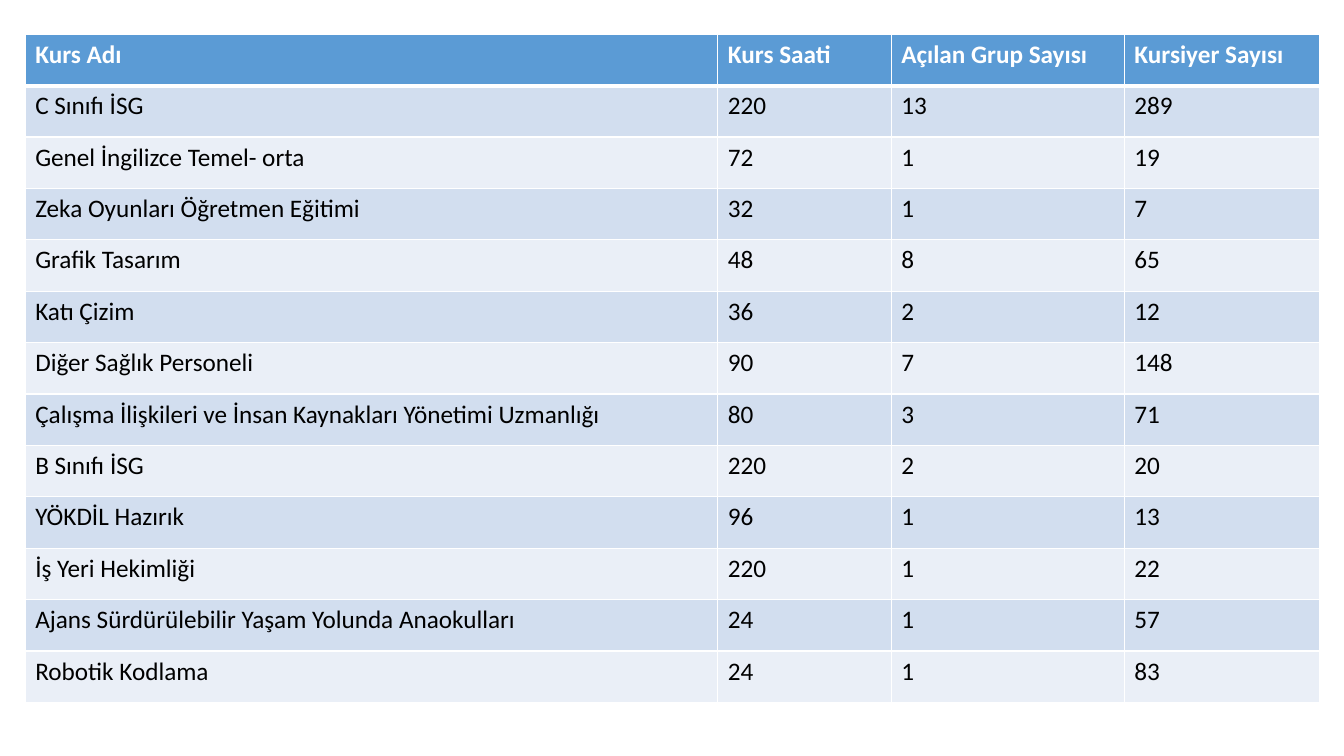
from dataclasses import dataclass

from lxml import etree
from pptx import Presentation
from pptx.dml.color import RGBColor
from pptx.oxml.ns import qn
from pptx.util import Inches, Pt


@dataclass(frozen=True)
class Theme:
    """Colours, type and line widths of the slide."""
    font: str = "Calibri"
    size: int = 18
    header_fill: str = "5B9BD5"
    header_text: str = "FFFFFF"
    body_text: str = "000000"
    bands: tuple = ("D2DEEF", "EAEFF7")
    border: str = "FFFFFF"
    thin: int = 1
    thick: int = 3


THEME = Theme()
BLANK = 6
SLIDE_W, SLIDE_H = 13.33, 7.5
TABLE_BOX = (0.25, 0.34, 12.84, 6.63)
COLUMN_SHARES = (0.535, 0.134, 0.18, 0.151)
HEADERS = ("Kurs Adı", "Kurs Saati", "Açılan Grup Sayısı", "Kursiyer Sayısı")
COURSES = (
    ("C Sınıfı İSG", 220, 13, 289),
    ("Genel İngilizce Temel- orta", 72, 1, 19),
    ("Zeka Oyunları Öğretmen Eğitimi", 32, 1, 7),
    ("Grafik Tasarım", 48, 8, 65),
    ("Katı Çizim", 36, 2, 12),
    ("Diğer Sağlık Personeli", 90, 7, 148),
    ("Çalışma İlişkileri ve İnsan Kaynakları Yönetimi Uzmanlığı", 80, 3, 71),
    ("B Sınıfı İSG", 220, 2, 20),
    ("YÖKDİL Hazırık", 96, 1, 13),
    ("İş Yeri Hekimliği", 220, 1, 22),
    ("Ajans Sürdürülebilir Yaşam Yolunda Anaokulları", 24, 1, 57),
    ("Robotik Kodlama", 24, 1, 83),
)


def set_borders(cell, top, bottom):
    """Draw the four cell edges, with the given top and bottom widths."""
    tc_pr = cell._tc.get_or_add_tcPr()
    widths = {"a:lnL": THEME.thin, "a:lnR": THEME.thin, "a:lnT": top, "a:lnB": bottom}
    for tag, width in widths.items():
        ln = etree.SubElement(tc_pr, qn(tag), w=str(Pt(width)))
        fill = etree.SubElement(ln, qn("a:solidFill"))
        etree.SubElement(fill, qn("a:srgbClr"), val=THEME.border)


def fill_cell(cell, value, row):
    """Write and style one cell according to its row."""
    header = row == 0
    set_borders(cell, THEME.thick if row == 1 else THEME.thin,
                THEME.thick if header else THEME.thin)
    fill = THEME.header_fill if header else THEME.bands[(row - 1) % 2]
    cell.fill.solid()
    cell.fill.fore_color.rgb = RGBColor.from_string(fill)
    cell.text = str(value)
    font = cell.text_frame.paragraphs[0].font
    font.name, font.size, font.bold = THEME.font, Pt(THEME.size), header
    color = THEME.header_text if header else THEME.body_text
    font.color.rgb = RGBColor.from_string(color)


def add_course_table(s, box):
    """Place the course table in the given box."""
    rows = (HEADERS, *COURSES)
    left, top, width, height = (Inches(v) for v in box)
    table = s.shapes.add_table(len(rows), len(HEADERS), left, top, width, height).table
    for column, share in zip(table.columns, COLUMN_SHARES):
        column.width = int(width * share)
    for i, values in enumerate(rows):
        for j, value in enumerate(values):
            fill_cell(table.cell(i, j), value, i)


def main():
    """Build the slide and save it."""
    prs = Presentation()
    prs.slide_width, prs.slide_height = Inches(SLIDE_W), Inches(SLIDE_H)
    s = prs.slides.add_slide(prs.slide_layouts[BLANK])
    add_course_table(s, TABLE_BOX)
    prs.save("out.pptx")


if __name__ == "__main__":
    main()
